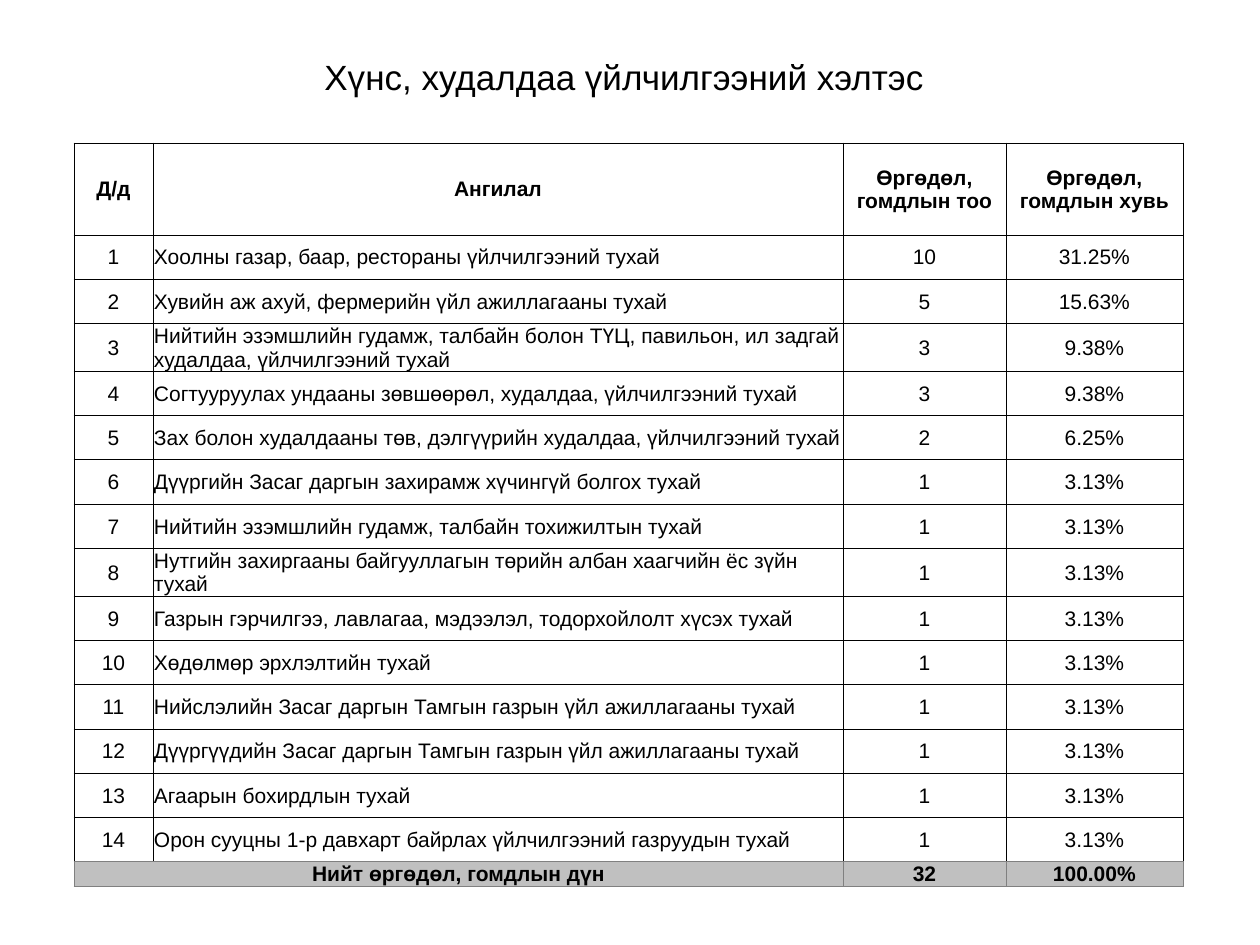
import dataclasses

import pptx
import pptx.dml.color
import pptx.enum.text
import pptx.oxml
import pptx.oxml.ns
import pptx.util

PX_PER_INCH = 126
FONT = "Arial"
BLACK, WHITE, GREY, SILVER = "000000", "FFFFFF", "808080", "C0C0C0"
CENTER = pptx.enum.text.PP_ALIGN.CENTER
LEFT = pptx.enum.text.PP_ALIGN.LEFT
MIDDLE = pptx.enum.text.MSO_ANCHOR.MIDDLE


@dataclasses.dataclass(frozen=True)
class RowStyle:
    fill: str = WHITE
    bold: bool = False
    top: str = BLACK
    sides: str = BLACK
    bottom: str = BLACK
    category_align: pptx.enum.text.PP_ALIGN = LEFT


@dataclasses.dataclass(frozen=True)
class Complaint:
    category: str
    count: int
    share: str


HEADER = RowStyle(bold=True, category_align=CENTER)
BODY = RowStyle()
LAST_BODY = RowStyle(bottom=GREY)
TOTAL = RowStyle(SILVER, True, GREY, GREY, GREY, CENTER)

HEADINGS = ["Д/д", "Ангилал", "Өргөдөл, гомдлын тоо", "Өргөдөл, гомдлын хувь"]
COMPLAINTS = [
    Complaint("Хоолны газар, баар, рестораны үйлчилгээний тухай", 10, "31.25%"),
    Complaint("Хувийн аж ахуй, фермерийн үйл ажиллагааны тухай", 5, "15.63%"),
    Complaint("Нийтийн эзэмшлийн гудамж, талбайн болон ТҮЦ, павильон, ил задгай "
              "худалдаа, үйлчилгээний тухай", 3, "9.38%"),
    Complaint("Согтууруулах ундааны зөвшөөрөл, худалдаа, үйлчилгээний тухай", 3, "9.38%"),
    Complaint("Зах болон худалдааны төв, дэлгүүрийн худалдаа, үйлчилгээний тухай", 2, "6.25%"),
    Complaint("Дүүргийн Засаг даргын захирамж хүчингүй болгох тухай", 1, "3.13%"),
    Complaint("Нийтийн эзэмшлийн гудамж, талбайн тохижилтын тухай", 1, "3.13%"),
    Complaint("Нутгийн захиргааны байгууллагын төрийн албан хаагчийн ёс зүйн тухай", 1, "3.13%"),
    Complaint("Газрын гэрчилгээ, лавлагаа, мэдээлэл, тодорхойлолт хүсэх тухай", 1, "3.13%"),
    Complaint("Хөдөлмөр эрхлэлтийн тухай", 1, "3.13%"),
    Complaint("Нийслэлийн Засаг даргын Тамгын газрын үйл ажиллагааны тухай", 1, "3.13%"),
    Complaint("Дүүргүүдийн Засаг даргын Тамгын газрын үйл ажиллагааны тухай", 1, "3.13%"),
    Complaint("Агаарын бохирдлын тухай", 1, "3.13%"),
    Complaint("Орон сууцны 1-р давхарт байрлах үйлчилгээний газруудын тухай", 1, "3.13%"),
]
TOTALS = ["Нийт өргөдөл, гомдлын дүн", "", "32", "100.00%"]

COLUMN_WIDTHS = [79, 690, 163, 177]
HEADER_HEIGHT, BODY_HEIGHT, TOTAL_HEIGHT = 92, 619, 25


def px(length: int) -> pptx.util.Emu:
    return pptx.util.Emu(round(length * pptx.util.Inches(1) / PX_PER_INCH))


def color(hex_code: str) -> pptx.dml.color.RGBColor:
    return pptx.dml.color.RGBColor.from_string(hex_code)


def apply(target, values: dict) -> None:
    for name, value in values.items():
        setattr(target, name, value)


def write_text(frame, text: str, size: int, bold: bool, align) -> None:
    paragraph = frame.paragraphs[0]
    paragraph.alignment = align
    run = paragraph.add_run()
    run.text = text
    apply(run.font, {"name": FONT, "size": pptx.util.Pt(size), "bold": bold})
    run.font.color.rgb = color(BLACK)


def draw_borders(cell, style: RowStyle) -> None:
    properties = cell._tc.get_or_add_tcPr()
    edges = {"L": style.sides, "R": style.sides, "T": style.top, "B": style.bottom}
    for edge, hex_code in edges.items():
        properties.append(pptx.oxml.parse_xml(
            f'<a:ln{edge} {pptx.oxml.ns.nsdecls("a")} w="{pptx.util.Pt(0.5)}">'
            f'<a:solidFill><a:srgbClr val="{hex_code}"/></a:solidFill></a:ln{edge}>'))


def fill_row(table, index: int, texts: list[str], style: RowStyle) -> None:
    for column, text in enumerate(texts):
        cell = table.cell(index, column)
        apply(cell, {"margin_left": px(1), "margin_right": px(1), "margin_top": px(1),
                     "margin_bottom": 0, "vertical_anchor": MIDDLE})
        draw_borders(cell, style)
        cell.fill.solid()
        cell.fill.fore_color.rgb = color(style.fill)
        if text:
            align = style.category_align if column == 1 else CENTER
            write_text(cell.text_frame, text, 12, style.bold, align)


def add_title(slide) -> None:
    title = slide.shapes.title
    apply(title, {"left": px(86), "top": px(48), "width": px(1086), "height": px(62)})
    apply(title.text_frame, {"word_wrap": True, "vertical_anchor": MIDDLE,
                             "auto_size": pptx.enum.text.MSO_AUTO_SIZE.NONE})
    write_text(title.text_frame, "Хүнс, худалдаа үйлчилгээний хэлтэс ", 20, False, CENTER)
    title.text_frame.paragraphs[0].line_spacing = 0.9


def add_complaint_table(slide) -> None:
    body_count = len(COMPLAINTS)
    table = slide.shapes.add_table(
        body_count + 2, len(COLUMN_WIDTHS), px(74), px(143), px(sum(COLUMN_WIDTHS)),
        px(HEADER_HEIGHT + BODY_HEIGHT + TOTAL_HEIGHT)).table
    apply(table, {"first_row": False, "horz_banding": False})
    for column, width in zip(table.columns, COLUMN_WIDTHS):
        column.width = px(width)
    body_row_height = px(BODY_HEIGHT) // body_count
    heights = [px(HEADER_HEIGHT), *[body_row_height] * body_count, px(TOTAL_HEIGHT)]
    for row, height in zip(table.rows, heights):
        row.height = height

    # Header, numbered categories, then the total
    fill_row(table, 0, HEADINGS, HEADER)
    for number, item in enumerate(COMPLAINTS, start=1):
        style = LAST_BODY if number == body_count else BODY
        fill_row(table, number, [str(number), item.category, str(item.count), item.share], style)
    total_row = body_count + 1
    fill_row(table, total_row, TOTALS, TOTAL)
    table.cell(total_row, 0).merge(table.cell(total_row, 1))


def main() -> None:
    presentation = pptx.Presentation()
    apply(presentation, {"slide_width": px(1260), "slide_height": px(945)})
    slide = presentation.slides.add_slide(presentation.slide_layouts[5])
    add_title(slide)
    add_complaint_table(slide)
    presentation.save("out.pptx")


if __name__ == "__main__":
    main()
